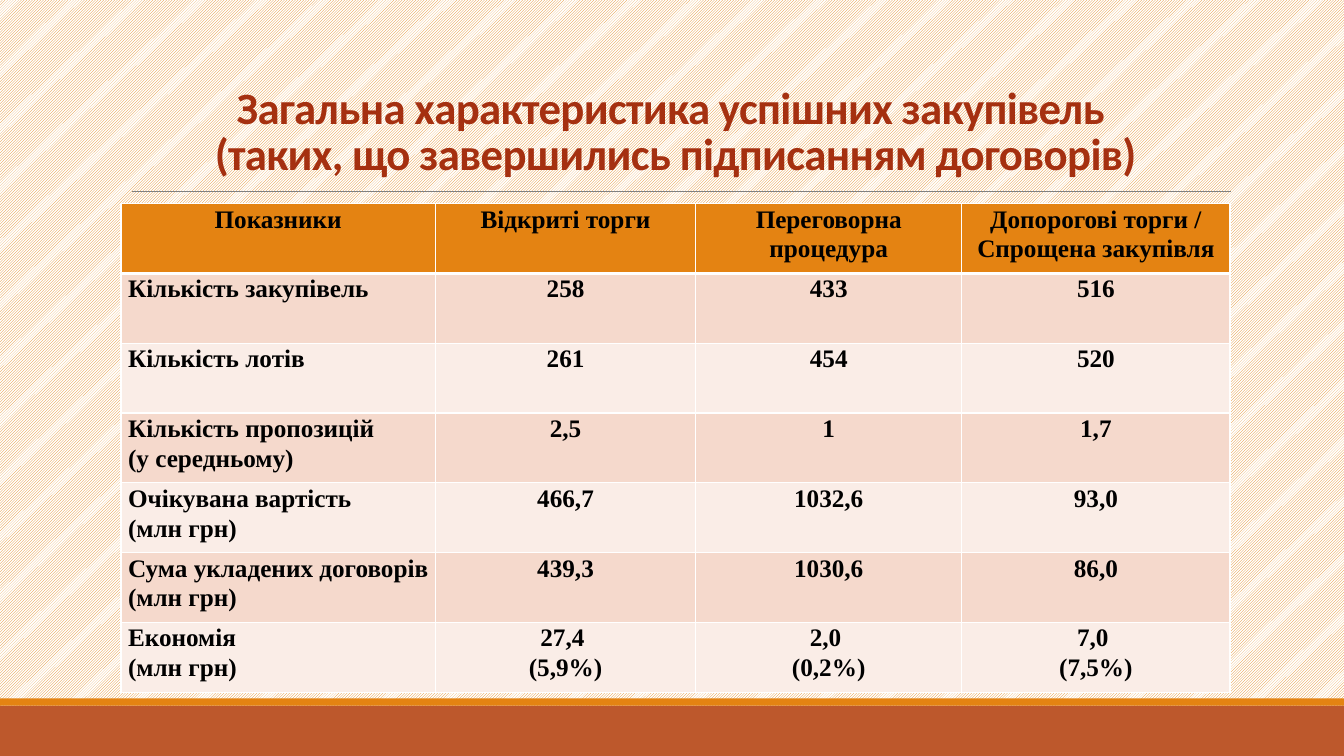
from lxml.etree import SubElement
from pptx import Presentation
from pptx.dml.color import RGBColor
from pptx.enum.dml import MSO_PATTERN
from pptx.enum.shapes import MSO_CONNECTOR, MSO_SHAPE
from pptx.enum.text import MSO_ANCHOR, PP_ALIGN
from pptx.oxml import parse_xml
from pptx.oxml.ns import nsdecls, qn
from pptx.util import Inches, Pt

WIDTH, HEIGHT = 13.33, 7.5
ORANGE, RUST, WHITE = "E48312", "BD582C", "FFFFFF"
BANDS = ("F5D9CC", "FAEDE7")
COLUMN_WIDTHS = (3.12, 2.58, 2.64, 2.66)
TITLE = ("Загальна характеристика успішних закупівель ",
         "(таких, що завершились підписанням договорів)")
# Each line of a cell is its own paragraph
ROWS = (
    ("Показники", "Відкриті торги", "Переговорна процедура",
     "Допорогові торги / Спрощена закупівля"),
    ("Кількість закупівель", "258", "433", "516"),
    ("Кількість лотів", "261", "454", "520"),
    ("Кількість пропозицій\n(у середньому)", "2,5", "1", "1,7"),
    ("Очікувана вартість\n(млн грн)", "466,7", "1032,6", "93,0"),
    ("Сума укладених договорів (млн грн)", "439,3", "1030,6", "86,0"),
    ("Економія\n(млн грн)", "27,4 \n(5,9%)", "2,0 \n(0,2%)", "7,0 \n(7,5%)"),
)


def color(value):
    return RGBColor.from_string(value)


def add_span(para, text, font, size, ink):
    span = para.add_run()
    span.text = text
    span.font.name, span.font.size, span.font.bold = font, Pt(size), True
    span.font.color.rgb = color(ink)
    return span


def paint_background(page):
    fill = page.background.fill
    fill.patterned()
    fill.pattern = MSO_PATTERN.LIGHT_UPWARD_DIAGONAL
    fill.fore_color.rgb = color(ORANGE)
    fill.back_color.rgb = color(WHITE)


def add_footer(page, top, stripe_height):
    bars = ((top + stripe_height, HEIGHT - top - stripe_height, RUST),
            (top, stripe_height, ORANGE))
    for bar_top, bar_height, paint in bars:
        bar = page.shapes.add_shape(MSO_SHAPE.RECTANGLE, 0, Inches(bar_top),
                                    Inches(WIDTH), Inches(bar_height))
        bar.shadow.inherit = False
        bar.fill.solid()
        bar.fill.fore_color.rgb = color(paint)
        bar.line.fill.background()


def add_title(page, left, top, width, height):
    # Heading
    box = page.shapes.add_textbox(*map(Inches, (left, top, width, height)))
    frame = box.text_frame
    frame.word_wrap = True
    frame.vertical_anchor = MSO_ANCHOR.BOTTOM
    para = frame.paragraphs[0]
    para.alignment, para.line_spacing = PP_ALIGN.CENTER, 0.85
    for index, line in enumerate(TITLE):
        if index:
            para.add_line_break()
        span = add_span(para, line, "Calibri", 32, "A53010")
        span.font._element.set("spc", "-50")

    # Rule below the heading
    rule_top = Inches(top + height + 0.07)
    rule = page.shapes.add_connector(MSO_CONNECTOR.STRAIGHT, Inches(left + 0.11),
                                     rule_top, Inches(left + width + 0.01), rule_top)
    rule.line.color.rgb = color("808080")
    rule.line.width = Pt(0.5)
    SubElement(rule._element.spPr, qn("a:effectLst"))


def set_borders(cell, bottom_width):
    sides = (("L", 1), ("R", 1), ("T", 1), ("B", bottom_width))
    for index, (side, width) in enumerate(sides):
        border = parse_xml(
            f'<a:ln{side} {nsdecls("a")} w="{Pt(width)}"><a:solidFill>'
            f'<a:srgbClr val="{WHITE}"/></a:solidFill></a:ln{side}>')
        cell._tc.get_or_add_tcPr().insert(index, border)


def fill_cell(cell, text, paint, alignment):
    cell.margin_left = cell.margin_right = Inches(0.07)
    cell.margin_top = cell.margin_bottom = 0
    cell.fill.solid()
    cell.fill.fore_color.rgb = color(paint)
    frame = cell.text_frame
    for index, line in enumerate(text.split("\n")):
        para = frame.add_paragraph() if index else frame.paragraphs[0]
        para.alignment, para.line_spacing = alignment, 1.07
        add_span(para, line, "Times New Roman", 18, "000000")


def add_indicators(page, left, top, width, height):
    table = page.shapes.add_table(len(ROWS), len(COLUMN_WIDTHS),
                                  *map(Inches, (left, top, width, height))).table
    for column, column_width in zip(table.columns, COLUMN_WIDTHS):
        column.width = Inches(column_width)
    for r, texts in enumerate(ROWS):
        table.rows[r].height = Inches(height / len(ROWS))
        for c, text in enumerate(texts):
            paint = BANDS[(r - 1) % 2] if r else ORANGE
            is_label = r > 0 and c == 0
            cell = table.cell(r, c)
            fill_cell(cell, text, paint,
                      PP_ALIGN.LEFT if is_label else PP_ALIGN.CENTER)
            set_borders(cell, 1 if r else 3)


def main():
    deck = Presentation()
    deck.slide_width, deck.slide_height = Inches(WIDTH), Inches(HEIGHT)
    page = deck.slides.add_slide(deck.slide_layouts[6])
    paint_background(page)
    add_footer(page, 6.93, 0.07)
    add_title(page, 1.2, 0.24, 11, 1.59)
    add_indicators(page, 1.2, 2.02, sum(COLUMN_WIDTHS), 4.85)
    deck.save("out.pptx")


if __name__ == "__main__":
    main()
